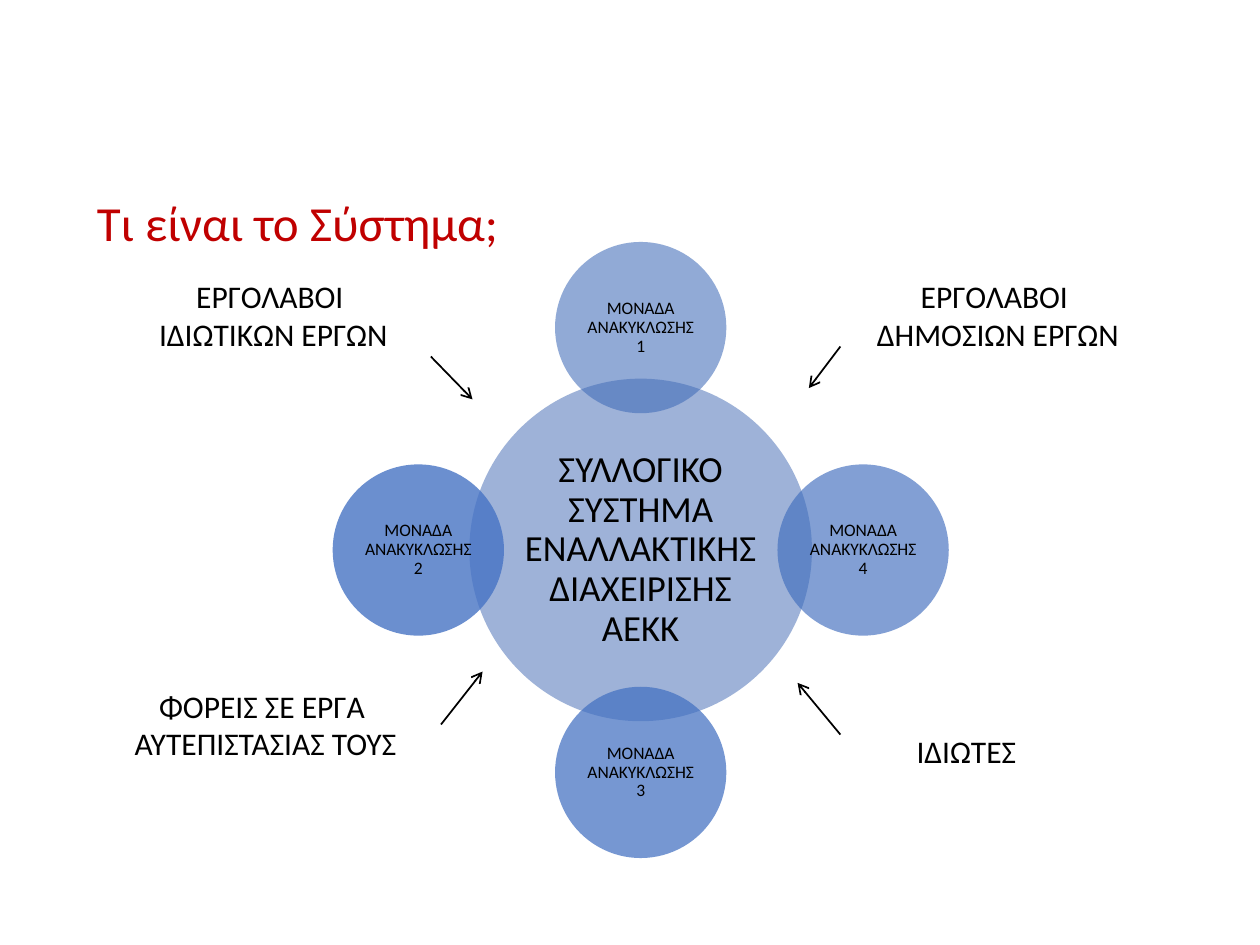
from math import cos, radians, sin

from lxml import etree
from pptx import Presentation
from pptx.dml.color import RGBColor
from pptx.enum import shapes, text
from pptx.oxml import ns
from pptx.util import Inches, Pt

FONT = "Calibri"
HEX = {
    "ink": "000000",
    "title": "C00000",
    "hub": "3E67B2",
    "top": "3E6AB8",
    "right": "3F6DBD",
    "bottom": "4270C1",
    "left": "4673C4",
}
HUB = "ΣΥΛΛΟΓΙΚΟ ΣΥΣΤΗΜΑ ΕΝΑΛΛΑΚΤΙΚΗΣ ΔΙΑΧΕΙΡΙΣΗΣ ΑΕΚΚ"
UNITS = [
    (1, "top", -90, 57),
    (4, "right", 0, 65),
    (3, "bottom", 90, 72),
    (2, "left", 180, 80),
]
GROUPS = [
    ((0.67, 2, 3, 1), ["ΕΡΓΟΛΑΒΟΙ ", "ΙΔΙΩΤΙΚΩΝ ΕΡΓΩΝ"]),
    ((0.58, 5.25, 3, 1), ["ΦΟΡΕΙΣ ΣΕ ΕΡΓΑ", " ΑΥΤΕΠΙΣΤΑΣΙΑΣ ΤΟΥΣ"]),
    ((6.42, 2, 3, 1), ["ΕΡΓΟΛΑΒΟΙ ", "ΔΗΜΟΣΙΩΝ ΕΡΓΩΝ"]),
    ((6.67, 5.67, 2, 0.58), ["ΙΔΙΩΤΕΣ"]),
]
ARROWS = [
    (3.5, 5.75, 3.83, 5.33),
    (3.42, 2.83, 3.75, 3.17),
    (6.67, 5.83, 6.33, 5.42),
    (6.67, 2.75, 6.42, 3.08),
]


def color(name):
    return RGBColor.from_string(HEX[name])


def write(shape, lines, size, tint="ink", align=text.PP_ALIGN.CENTER, space=None):
    frame = shape.text_frame
    frame.word_wrap = True
    frame.vertical_anchor = text.MSO_ANCHOR.MIDDLE
    for i, line in enumerate(lines):
        para = frame.add_paragraph() if i else frame.paragraphs[0]
        para.alignment = align
        para.line_spacing = space
        run = para.add_run()
        run.text = line
        run.font.name = FONT
        run.font.size = Pt(size)
        run.font.color.rgb = color(tint)


def label(slide, box, lines, size, **style):
    shape = slide.shapes.add_textbox(*map(Inches, box))
    write(shape, lines, size, **style)


def circle(slide, x, y, width, tint, alpha, line, size, inset):
    box = (x - width / 2, y - width / 2, width, width)
    shape = slide.shapes.add_shape(shapes.MSO_SHAPE.OVAL, *map(Inches, box))
    shape.shadow.inherit = False
    shape.line.fill.background()
    shape.fill.solid()
    shape.fill.fore_color.rgb = color(tint)
    paint = shape.fill._xPr.find(ns.qn("a:solidFill"))[0]
    etree.SubElement(paint, ns.qn("a:alpha"), val=str(alpha * 1000))
    frame = shape.text_frame
    frame.margin_left = frame.margin_right = Inches(inset)
    frame.margin_top = frame.margin_bottom = Inches(inset)
    write(shape, [line], size, space=0.9)


def wheel(slide, left, top, width):
    x, y = left + width / 2, top + width / 2
    small = width * 0.278
    orbit = (width - small) / 2
    circle(slide, x, y, small * 2, "hub", 50, HUB, 21, 0.03)
    for number, tint, angle, alpha in UNITS:
        turn = radians(angle)
        circle(slide, x + orbit * cos(turn), y + orbit * sin(turn), small,
               tint, alpha, f"ΜΟΝΑΔΑ ΑΝΑΚΥΚΛΩΣΗΣ {number}", 10, 0.01)


def arrow(slide, ends):
    line = slide.shapes.add_connector(
        shapes.MSO_CONNECTOR.STRAIGHT, *map(Inches, ends))
    line.line.color.rgb = color("ink")
    line.line.width = Pt(1)
    etree.SubElement(line.line._get_or_add_ln(), ns.qn("a:tailEnd"), type="arrow")
    etree.SubElement(line._element.spPr, ns.qn("a:effectLst"))


def main():
    deck = Presentation()
    deck.slide_width, deck.slide_height = Inches(10), Inches(7.5)
    slide = deck.slides.add_slide(deck.slide_layouts[6])
    wheel(slide, 2.64, 1.92, 4.89)
    label(slide, (0.67, 1.5, 3.83, 0.58), ["Τι είναι το Σύστημα;"], 28,
          tint="title", align=text.PP_ALIGN.LEFT, space=0.9)
    for box, lines in GROUPS:
        label(slide, box, lines, 18)
    for ends in ARROWS:
        arrow(slide, ends)
    deck.save("out.pptx")


if __name__ == "__main__":
    main()
